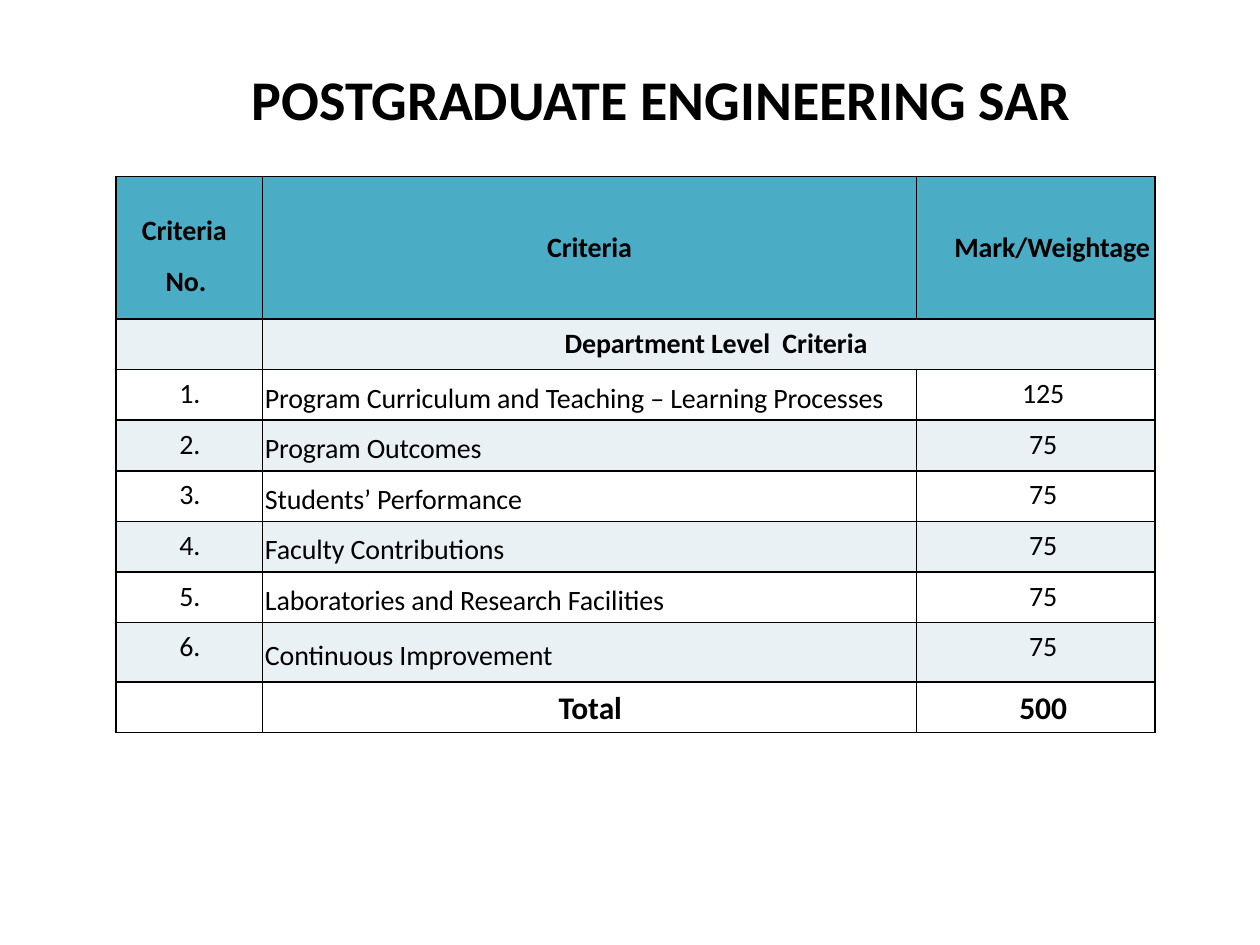
import pptx
import pptx.dml.color
import pptx.enum.text
import pptx.oxml
import pptx.oxml.ns
import pptx.util

Cm = pptx.util.Cm
Pt = pptx.util.Pt
RGBColor = pptx.dml.color.RGBColor
ALIGN = pptx.enum.text.PP_ALIGN
MIDDLE = pptx.enum.text.MSO_ANCHOR.MIDDLE
TOP = pptx.enum.text.MSO_ANCHOR.TOP

BLACK = RGBColor(0x00, 0x00, 0x00)
WHITE = RGBColor(0xFF, 0xFF, 0xFF)
TEAL = RGBColor(0x4B, 0xAC, 0xC6)
PALE = RGBColor(0xE9, 0xF1, 0xF5)

TITLE = "POSTGRADUATE ENGINEERING SAR"
HEADINGS = ("Criteria No.", "Criteria", "Mark/Weightage")
SECTION = "Department Level  Criteria"
CRITERIA = [
    ("Program Curriculum and Teaching – Learning Processes", 125),
    ("Program Outcomes", 75),
    ("Students’ Performance", 75),
    ("Faculty Contributions", 75),
    ("Laboratories and Research Facilities", 75),
    ("Continuous Improvement", 75),
]
TOTAL = sum(mark for _, mark in CRITERIA)

COLUMN_WIDTHS = (Cm(2.95), Cm(13.19), Cm(4.8))
HEADER_HEIGHT, ROW_HEIGHT, LAST_CRITERION_HEIGHT = Cm(2.87), Cm(1.02), Cm(1.2)

HEADING_FORMATS = (
    dict(left=Cm(1), hanging=Cm(-0.48), line_spacing=1.5),
    dict(align=ALIGN.CENTER),
    dict(left=Cm(0.76)),
)
BODY = dict(anchor=TOP, align=ALIGN.CENTER, before=5.1, inset_top=Cm(0.15))
NUMBER = dict(BODY, left=Cm(0.03))
LABEL = dict(BODY, left=Cm(0.05), anchor=MIDDLE, align=ALIGN.LEFT)
MARK = dict(BODY, left=Cm(0.3))


def write(frame, text, size=16, bold=False, align=ALIGN.LEFT, left=0, hanging=0,
          before=0, line_spacing=None, tracking=-5):
    """Fill a text frame with one paragraph; tracking is in hundredths of a point."""
    frame.word_wrap = True
    paragraph = frame.paragraphs[0]
    paragraph.alignment = align
    paragraph.space_before = Pt(before)
    paragraph.line_spacing = line_spacing
    properties = paragraph._p.get_or_add_pPr()
    properties.set("marL", str(int(left)))
    properties.set("indent", str(int(hanging)))
    run = paragraph.add_run()
    run.text = text
    run.font.name = "Calibri"
    run.font.size = Pt(size)
    run.font.bold = bold
    run.font.color.rgb = BLACK
    run._r.get_or_add_rPr().set("spc", str(tracking))


def write_cell(cell, text, anchor=MIDDLE, inset_top=0, **text_format):
    cell.vertical_anchor = anchor
    cell.margin_left = cell.margin_right = cell.margin_bottom = 0
    cell.margin_top = inset_top
    write(cell.text_frame, text, **text_format)


def paint(cell, color):
    """Draw the four borders, then the fill, in the order the schema asks for."""
    properties = cell._tc.get_or_add_tcPr()
    for side in ("lnL", "lnR", "lnT", "lnB"):
        properties.append(pptx.oxml.parse_xml(
            f'<a:{side} {pptx.oxml.ns.nsdecls("a")} w="{Pt(1)}"><a:solidFill>'
            f'<a:srgbClr val="{BLACK}"/></a:solidFill></a:{side}>'))
    cell.fill.solid()
    cell.fill.fore_color.rgb = color


def add_title(slide):
    title = slide.shapes.add_textbox(Cm(2.54), Cm(1.27), Cm(20.96), Cm(1.4))
    frame = title.text_frame
    frame.vertical_anchor = MIDDLE
    frame.margin_left = Cm(2.54)
    frame.margin_top = frame.margin_right = frame.margin_bottom = 0
    write(frame, TITLE, size=32, bold=True, before=0.9, tracking=0)


def add_criteria_table(slide):
    heights = [HEADER_HEIGHT] + [ROW_HEIGHT] * (len(CRITERIA) + 2)
    heights[-2] = LAST_CRITERION_HEIGHT
    table = slide.shapes.add_table(
        len(heights), len(COLUMN_WIDTHS), Cm(2.34), Cm(3.56),
        sum(COLUMN_WIDTHS), sum(heights)).table
    for column, width in zip(table.columns, COLUMN_WIDTHS):
        column.width = width
    for index, height in enumerate(heights):
        table.rows[index].height = height
        color = TEAL if index == 0 else PALE if index % 2 else WHITE
        for cell in table.rows[index].cells:
            paint(cell, color)

    for column, (heading, heading_format) in enumerate(zip(HEADINGS, HEADING_FORMATS)):
        write_cell(table.cell(0, column), heading, bold=True, **heading_format)

    table.cell(1, 1).merge(table.cell(1, 2))
    write_cell(table.cell(1, 1), SECTION, bold=True, **MARK)

    for number, (criterion, mark) in enumerate(CRITERIA, start=1):
        row = number + 1
        write_cell(table.cell(row, 0), f"{number}.", **NUMBER)
        write_cell(table.cell(row, 1), criterion, **LABEL)
        write_cell(table.cell(row, 2), str(mark), **MARK)

    total_row = len(heights) - 1
    write_cell(table.cell(total_row, 1), "Total", size=18, bold=True, **NUMBER)
    write_cell(table.cell(total_row, 2), str(TOTAL), size=18, bold=True, **MARK)


def main():
    deck = pptx.Presentation()
    deck.slide_width, deck.slide_height = Cm(25.4), Cm(19.05)
    slide = deck.slides.add_slide(deck.slide_layouts[6])
    add_title(slide)
    add_criteria_table(slide)
    deck.save("out.pptx")


if __name__ == "__main__":
    main()
